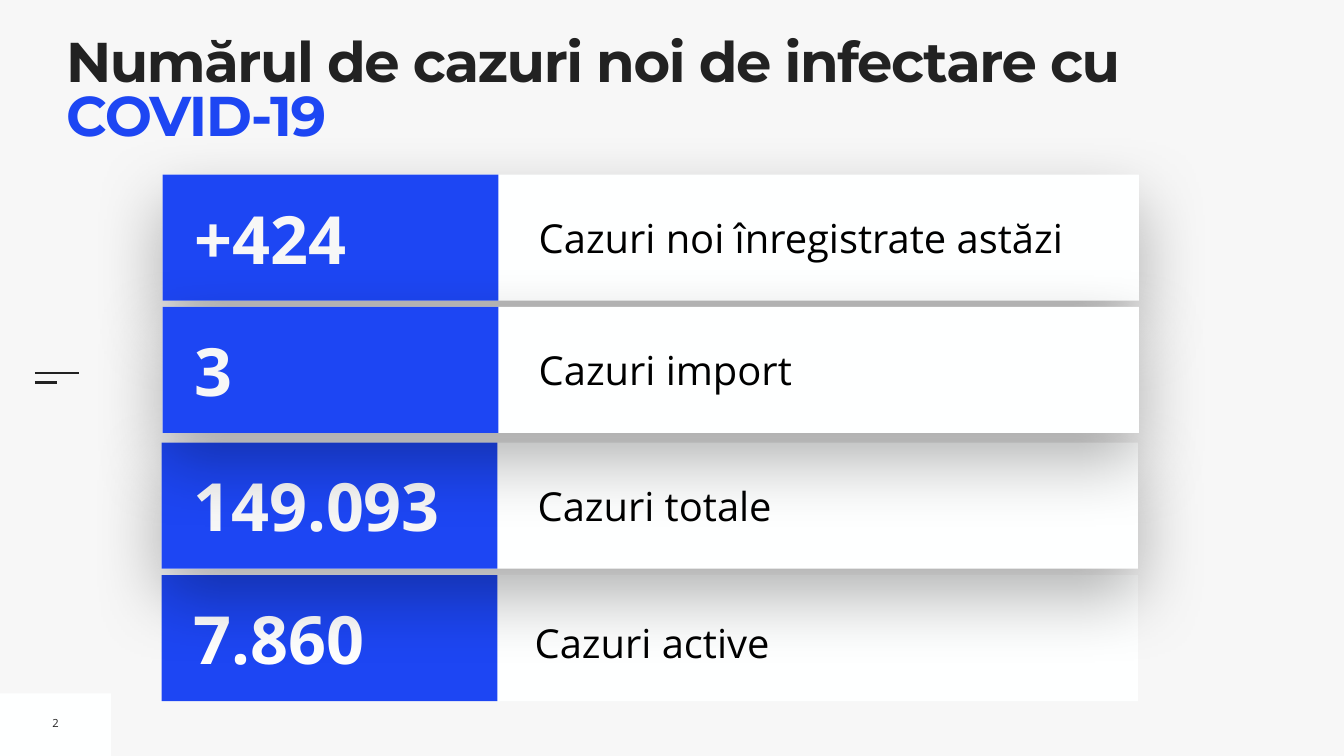
import pptx
import pptx.util
import pptx.dml.color
import pptx.enum.shapes
import pptx.enum.text
import pptx.oxml
import pptx.oxml.ns
import lxml.etree

Pt = pptx.util.Pt
ANCHOR = pptx.enum.text.MSO_ANCHOR
ALIGN = pptx.enum.text.PP_ALIGN

# Content
TITLE = [("Numărul de cazuri noi de infectare cu ", "ink"), ("COVID-19", "accent")]
PAGE_NUMBER = "2"
# Rows from back to front, since each shadow falls on the row drawn before it
ROWS = [
    {"value": "7.860", "label": "Cazuri active", "left": 231, "top": 821.8,
     "color": "white", "shadow": False, "label_box": (532.8, 41.5, 833.8, 90),
     "inset": 0, "spacing": 1.3},
    {"value": "149.093", "label": "Cazuri totale", "left": 231, "top": 632.2},
    {"value": "+424", "label": "Cazuri noi înregistrate astăzi", "left": 232.5, "top": 249.5},
    {"value": "3", "label": "Cazuri import", "left": 232.5, "top": 438.5},
]
ROW_DEFAULTS = {"color": "paper", "shadow": True, "inset": 7.2, "spacing": None,
                "label_box": (530, 48.2, 846.7, 83.5)}

# Row geometry, relative to the row's corner
CARD_SIZE = (1394.6, 180)
VALUE_SIZE = (479.5, 180)
VALUE_BOX = (38.2, 25, 434.2, 129.6)
DASHES = [(533.5, 63.4), (546.5, 31.7)]  # top, length

THEME = {
    "paper": "F7F7F7", "card": "FEFFFF", "white": "FFFFFF", "ink": "222222",
    "accent": "1D46F3", "black": "000000",
    "head_font": "Montserrat", "body_font": "Open Sans",
    "title": 80, "value": 95, "label": 57, "number": 16,
}


def color(name):
    return pptx.dml.color.RGBColor.from_string(THEME[name])


def add_span(para, text, size, tint, font="body_font", bold=False):
    span = para.add_run()
    span.text = text
    span.font.name = THEME[font]
    span.font.size = Pt(THEME[size])
    span.font.bold = bold
    span.font.color.rgb = color(tint)
    return span


def add_block(shapes, left, top, size, fill):
    block = shapes.add_shape(pptx.enum.shapes.MSO_SHAPE.RECTANGLE,
                             Pt(left), Pt(top), Pt(size[0]), Pt(size[1]))
    block.shadow.inherit = False
    block.fill.solid()
    block.fill.fore_color.rgb = color(fill)
    block.line.fill.background()
    return block


def add_text(shapes, left, top, width, height, inset=7.2, wrap=True):
    box = shapes.add_textbox(Pt(left), Pt(top), Pt(width), Pt(height))
    frame = box.text_frame
    frame.word_wrap = wrap
    frame.auto_size = pptx.enum.text.MSO_AUTO_SIZE.SHAPE_TO_FIT_TEXT
    frame.vertical_anchor = ANCHOR.MIDDLE
    frame.margin_left = frame.margin_right = Pt(inset)
    frame.margin_top = frame.margin_bottom = Pt(inset)
    return frame.paragraphs[0]


def add_drop_shadow(shape):
    effects = shape._element.spPr.find(pptx.oxml.ns.qn("a:effectLst"))
    effects.append(pptx.oxml.parse_xml(
        f'<a:outerShdw {pptx.oxml.ns.nsdecls("a")} blurRad="{Pt(100)}" dist="{Pt(40)}" '
        f'dir="5400000" rotWithShape="0"><a:srgbClr val="{THEME["black"]}">'
        '<a:alpha val="30000"/></a:srgbClr></a:outerShdw>'))


def add_row(page, row):
    row = {**ROW_DEFAULTS, **row}
    left, top = row["left"], row["top"]
    shapes = page.shapes.add_group_shape().shapes

    card = add_block(shapes, left, top, CARD_SIZE, "card")
    if row["shadow"]:
        add_drop_shadow(card)
    x, y, width, height = row["label_box"]
    para = add_text(shapes, left + x, top + y, width, height, row["inset"])
    para.line_spacing = row["spacing"]
    add_span(para, row["label"], "label", "black")

    add_block(shapes, left, top, VALUE_SIZE, "accent")
    x, y, width, height = VALUE_BOX
    para = add_text(shapes, left + x, top + y, width, height)
    add_span(para, row["value"], "value", row["color"], bold=True)


def add_title(page):
    title = page.shapes.title
    title.left, title.top, title.width, title.height = Pt(94.3), Pt(56.2), Pt(1723.7), Pt(113.8)
    frame = title.text_frame
    frame.word_wrap = True
    frame.auto_size = pptx.enum.text.MSO_AUTO_SIZE.NONE
    frame.vertical_anchor = ANCHOR.TOP
    frame.margin_left = frame.margin_right = frame.margin_top = frame.margin_bottom = 0
    para = frame.paragraphs[0]
    para.alignment = ALIGN.LEFT
    para.line_spacing = 0.8
    for text, tint in TITLE:
        span = add_span(para, text, "title", tint, "head_font", True)
        span._r.get_or_add_rPr().set("spc", "-200")


def add_margin_marks(page):
    # Page number tab
    add_block(page.shapes, 0, 990.7, (158.4, 89.3), "card")
    para = add_text(page.shapes, 67, 1014.5, 24.5, 36.7, wrap=False)
    para.alignment = ALIGN.CENTER
    add_span(para, PAGE_NUMBER, "number", "ink")

    # Two dashes at the left edge
    for top, length in DASHES:
        dash = page.shapes.add_connector(pptx.enum.shapes.MSO_CONNECTOR.STRAIGHT,
                                         Pt(49.7), Pt(top), Pt(49.7 + length), Pt(top))
        dash.line.color.rgb = color("ink")
        dash.line.width = Pt(3)
        lxml.etree.SubElement(dash._element.spPr, pptx.oxml.ns.qn("a:effectLst"))


def main():
    deck = pptx.Presentation()
    deck.slide_width, deck.slide_height = Pt(1920), Pt(1080)
    page = deck.slides.add_slide(deck.slide_layouts[5])
    page.background.fill.solid()
    page.background.fill.fore_color.rgb = color("paper")

    add_title(page)
    add_margin_marks(page)
    for row in ROWS:
        add_row(page, row)
    deck.save("out.pptx")


if __name__ == "__main__":
    main()
